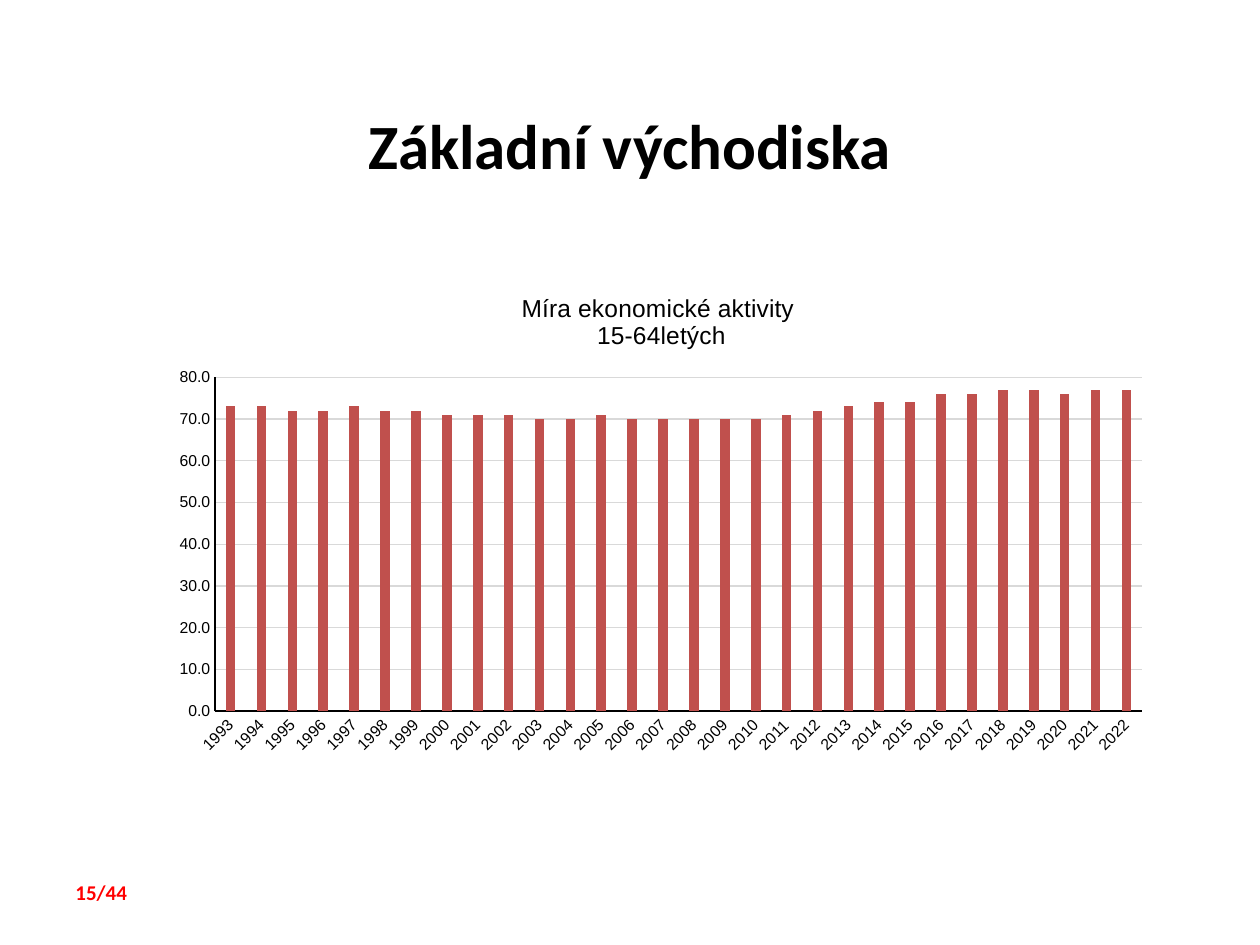
from lxml import etree
from pptx import Presentation
from pptx.chart.data import CategoryChartData
from pptx.dml.color import RGBColor
from pptx.enum.chart import XL_CHART_TYPE, XL_TICK_MARK
from pptx.enum.text import MSO_ANCHOR, PP_ALIGN
from pptx.oxml import parse_xml
from pptx.oxml.ns import nsdecls
from pptx.util import Inches, Pt

COLUMNS = XL_CHART_TYPE.COLUMN_CLUSTERED
NO_TICK = XL_TICK_MARK.NONE
MIDDLE = MSO_ANCHOR.MIDDLE
CENTER = PP_ALIGN.CENTER

BLACK = RGBColor(0x00, 0x00, 0x00)
RED = RGBColor(0xFF, 0x00, 0x00)
BRICK = RGBColor(0xC0, 0x50, 0x4D)
GRID_GREY = RGBColor(0xD9, 0xD9, 0xD9)

# Content
TITLE = "Základní východiska"
PAGE_NUMBER = "15/44"
CHART_TITLE = ["Míra ekonomické aktivity ", "15-64letých"]
FIRST_YEAR = 1993
ACTIVITY_RATES = [
    73, 73, 72, 72, 73, 72, 72, 71, 71, 71,
    70, 70, 71, 70, 70, 70, 70, 70, 71, 72,
    73, 74, 74, 76, 76, 77, 77, 76, 77, 77,
]

# Plot area as shares of the chart frame
PLOT_LAYOUT = {"x": 0.055, "y": 0.214, "w": 0.924, "h": 0.68}


def style_font(font, name, size, color, bold=False):
    font.name = name
    font.size = Pt(size)
    font.bold = bold
    font.color.rgb = color


def add_span(para, text, name, size, color, bold=False):
    span = para.add_run()
    span.text = text
    style_font(span.font, name, size, color, bold)


def style_axis(axis):
    axis.major_tick_mark = NO_TICK
    axis.minor_tick_mark = NO_TICK
    style_font(axis.tick_labels.font, "Arial", 9, BLACK)
    axis.format.line.color.rgb = BLACK
    axis.format.line.width = Pt(1.25)


def set_plot_layout(chart):
    plot_area = chart.plots[0]._element.getparent()
    for old in plot_area.findall("{*}layout"):
        plot_area.remove(old)
    layout = parse_xml(
        f"<c:layout {nsdecls('c')}><c:manualLayout>"
        '<c:layoutTarget val="inner"/><c:xMode val="edge"/><c:yMode val="edge"/>'
        "</c:manualLayout></c:layout>")
    namespace = etree.QName(layout).namespace
    for key, share in PLOT_LAYOUT.items():
        etree.SubElement(layout[0], f"{{{namespace}}}{key}", val=str(share))
    plot_area.insert(0, layout)


def add_title(page):
    title = page.shapes.title
    title.left, title.top = Inches(0.5), Inches(0.52)
    title.width, title.height = Inches(9), Inches(1.25)
    frame = title.text_frame
    frame.vertical_anchor = MIDDLE
    para = frame.paragraphs[0]
    para.alignment = CENTER
    add_span(para, TITLE, "Calibri", 36, BLACK, True)


def add_page_number(page):
    box = page.shapes.add_textbox(Inches(0.5), Inches(6.93), Inches(0.92), Inches(0.3))
    box.text_frame.word_wrap = True
    add_span(box.text_frame.paragraphs[0], PAGE_NUMBER, "Calibri", 12, RED, True)


def add_rate_chart(page):
    data = CategoryChartData(number_format="0.0")
    data.categories = [str(FIRST_YEAR + i) for i in range(len(ACTIVITY_RATES))]
    data.add_series("\n".join(CHART_TITLE), ACTIVITY_RATES)
    chart = page.shapes.add_chart(
        COLUMNS, Inches(1.27), Inches(2.16), Inches(7.96), Inches(3.9), data).chart
    style_font(chart.font, "Arial", 10, BLACK)
    chart.has_legend = False

    # Chart title, one paragraph a line
    chart.has_title = True
    chart.chart_title.include_in_layout = False
    frame = chart.chart_title.text_frame
    for i, line in enumerate(CHART_TITLE):
        para = frame.add_paragraph() if i else frame.paragraphs[0]
        add_span(para, line, "Arial", 14, BLACK)

    # Columns
    plot = chart.plots[0]
    plot.vary_by_categories = False
    plot.gap_width = 219
    plot.overlap = -27
    fill = plot.series[0].format.fill
    fill.solid()
    fill.fore_color.rgb = BRICK

    # Axes
    years, rates = chart.category_axis, chart.value_axis
    style_axis(years)
    style_axis(rates)
    years.tick_labels._element.txPr.bodyPr.set("rot", "-2700000")
    rates.minimum_scale, rates.maximum_scale, rates.major_unit = 0, 80, 10
    rates.tick_labels.number_format = "0.0"
    rates.tick_labels.number_format_is_linked = False
    rates.has_major_gridlines = True
    grid = rates.major_gridlines.format.line
    grid.color.rgb = GRID_GREY
    grid.width = Pt(0.75)
    set_plot_layout(chart)


def main():
    deck = Presentation()
    deck.slide_width, deck.slide_height = Inches(10), Inches(7.5)
    page = deck.slides.add_slide(deck.slide_layouts[5])
    add_title(page)
    add_page_number(page)
    add_rate_chart(page)
    deck.save("out.pptx")


if __name__ == "__main__":
    main()
